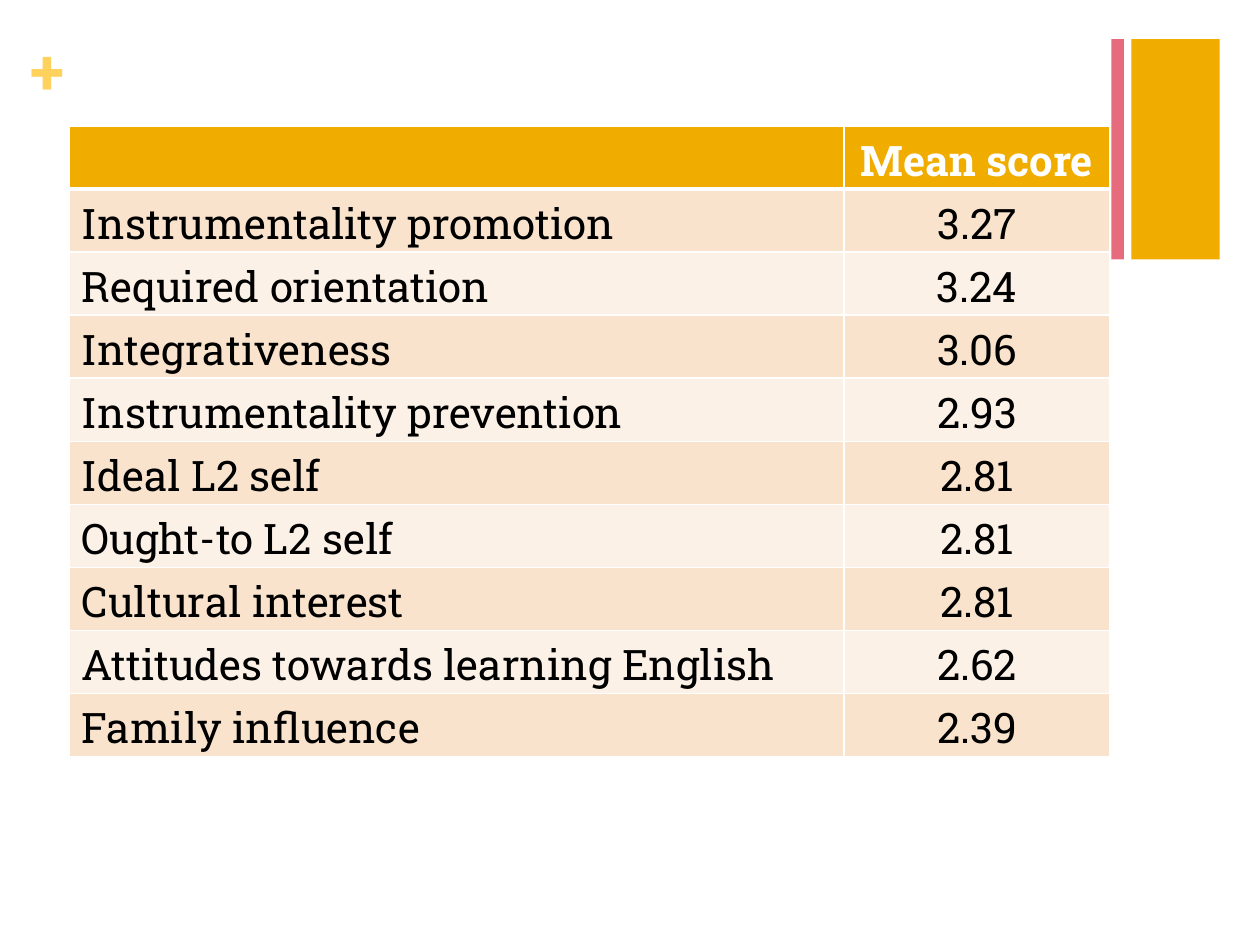
from dataclasses import dataclass

from lxml import etree
from pptx import Presentation, util as u
from pptx.dml.color import RGBColor
from pptx.enum import shapes, text
from pptx.oxml import ns


@dataclass(frozen=True)
class Theme:
    font: str = "Roboto Slab"
    gold: str = "F0AD00"
    light_gold: str = "FFD25D"
    pink: str = "E66C7D"
    bands: tuple = ("F9E3CC", "FCF1E7")
    white: str = "FFFFFF"
    black: str = "000000"
    body: int = 24
    mark: int = 36
    rule: int = 1
    header_rule: int = 3


class Deck:
    """Draws themed elements on the current slide."""

    def __init__(self, prs, theme):
        self.theme = theme
        self.s = prs.slides.add_slide(prs.slide_layouts[6])

    def fill(self, target, color):
        target.fill.solid()
        target.fill.fore_color.rgb = RGBColor.from_string(color)

    def set_text(self, tf, words, size, color, bold=False, align=text.PP_ALIGN.LEFT):
        tf.text = words
        p = tf.paragraphs[0]
        p.alignment = align
        for r in p.runs:
            r.font.name = self.theme.font
            r.font.size = u.Pt(size)
            r.font.bold = bold
            r.font.color.rgb = RGBColor.from_string(color)

    def bar(self, box, color):
        sp = self.s.shapes.add_shape(shapes.MSO_SHAPE.RECTANGLE, *map(u.Inches, box))
        sp.shadow.inherit = False
        self.fill(sp, color)
        sp.line.fill.background()

    def label(self, box, words, size, color):
        tf = self.s.shapes.add_textbox(*map(u.Inches, box)).text_frame
        tf.word_wrap = True
        tf.margin_left = tf.margin_right = tf.margin_top = tf.margin_bottom = 0
        self.set_text(tf, words, size, color, bold=True)

    def borders(self, cell, widths):
        tc_pr = cell._tc.get_or_add_tcPr()
        for i, (side, width) in enumerate(zip("LRTB", widths)):
            ln = etree.Element(ns.qn(f"a:ln{side}"), w=str(u.Pt(width)))
            solid = etree.SubElement(ln, ns.qn("a:solidFill"))
            etree.SubElement(solid, ns.qn("a:srgbClr"), val=self.theme.white)
            tc_pr.insert(i, ln)

    def table(self, left, top, col_widths, row_height, rows):
        t = self.theme
        box = (left, top, sum(col_widths), row_height * len(rows))
        table = self.s.shapes.add_table(len(rows), len(col_widths), *map(u.Inches, box)).table
        for column, width in zip(table.columns, col_widths):
            column.width = u.Inches(width)
        for i, row in enumerate(rows):
            header = i == 0
            background = t.gold if header else t.bands[(i - 1) % 2]
            color = t.white if header else t.black
            top_rule = t.header_rule if i == 1 else t.rule
            bottom_rule = t.header_rule if header else t.rule
            for j, words in enumerate(row):
                cell = table.cell(i, j)
                align = text.PP_ALIGN.CENTER if j else text.PP_ALIGN.LEFT
                self.set_text(cell.text_frame, words, t.body, color, header, align)
                self.fill(cell, background)
                self.borders(cell, (t.rule, t.rule, top_rule, bottom_rule))


def main():
    prs = Presentation()
    prs.slide_width, prs.slide_height = u.Inches(10), u.Inches(7.5)
    theme = Theme()
    deck = Deck(prs, theme)
    deck.bar((8.98, 0.31, 0.7, 1.75), theme.gold)
    deck.label((0.24, 0.25, 0.29, 0.61), "+", theme.mark, theme.light_gold)
    deck.bar((8.82, 0.31, 0.1, 1.75), theme.pink)
    scores = [
        ("", "Mean score"),
        ("Instrumentality promotion", "3.27"),
        ("Required orientation", "3.24"),
        ("Integrativeness", "3.06"),
        ("Instrumentality prevention", "2.93"),
        ("Ideal L2 self", "2.81"),
        ("Ought-to L2 self", "2.81"),
        ("Cultural interest", "2.81"),
        ("Attitudes towards learning English", "2.62"),
        ("Family influence", "2.39"),
    ]
    deck.table(0.55, 1, (6.15, 2.11), 0.5, scores)
    prs.save("out.pptx")


if __name__ == "__main__":
    main()
